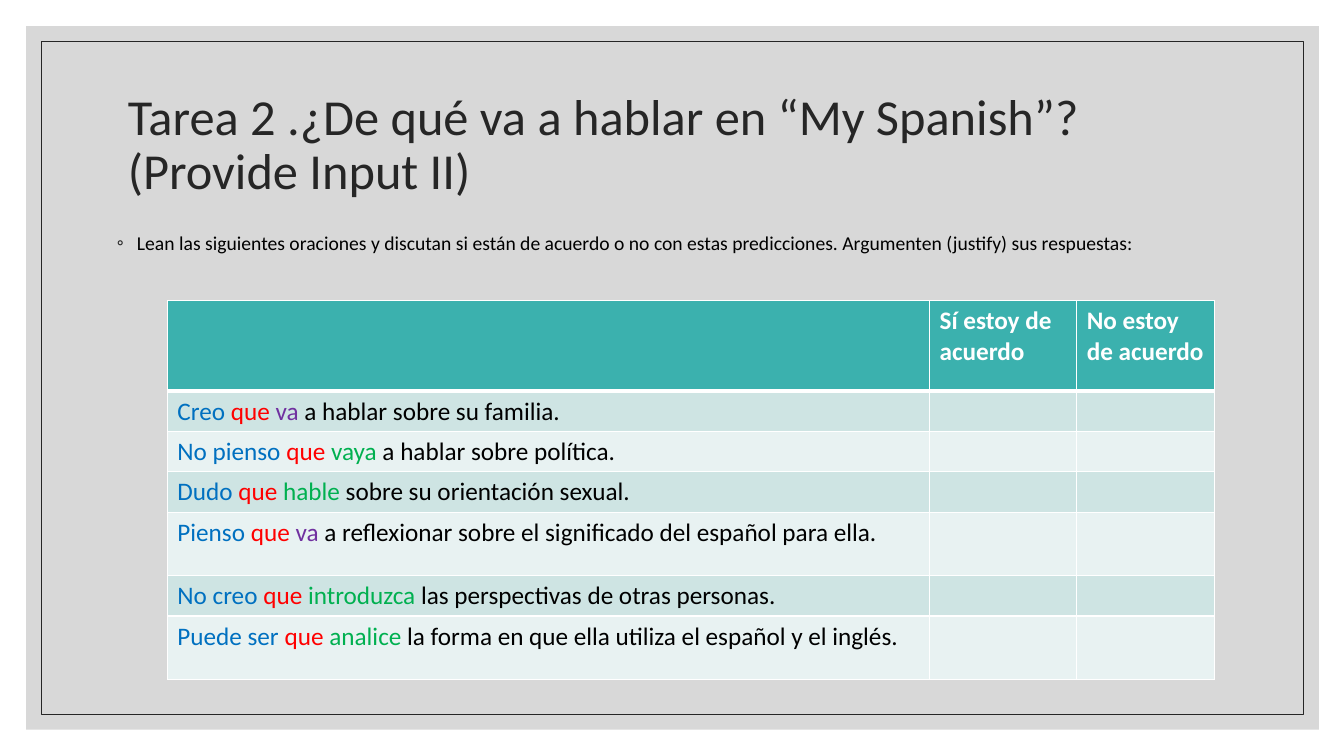
from pptx import Presentation
from pptx.util import Inches, Pt
from pptx.dml.color import RGBColor
from pptx.enum.shapes import MSO_SHAPE
from pptx.enum.text import MSO_ANCHOR
from pptx.oxml.ns import qn
from lxml.etree import SubElement

theme = {
    "font": "Calibri",
    "title": 36, "lead": 14, "cell": 18,
    "ink": "262626", "black": "000000", "white": "FFFFFF",
    "panel": "BFBFBF", "head": "3BB1AE", "bands": ["CEE4E3", "E8F2F2"],
    "verb": "0070C0", "que": "FF0000", "fact": "7030A0", "doubt": "00B050",
}


def color(name):
    return RGBColor.from_string(theme.get(name, name))


def add_run(para, text, size, tint, bold=False):
    run = para.add_run()
    run.text = text
    run.font.name = theme["font"]
    run.font.size = Pt(theme[size])
    run.font.bold = bold
    run.font.color.rgb = color(tint)


deck = Presentation()
deck.slide_width, deck.slide_height = Inches(13.33), Inches(7.5)
slide = deck.slides.add_slide(deck.slide_layouts[6])
shapes = slide.shapes

panel = shapes.add_shape(MSO_SHAPE.RECTANGLE, Inches(0.26), Inches(0.26), Inches(12.82), Inches(6.98))
panel.shadow.inherit = False
panel.fill.solid()
panel.fill.fore_color.rgb = color("panel")
tone = panel.fill._xPr.find(qn("a:solidFill"))[0]
SubElement(tone, qn("a:alpha"), val="60000")
panel.line.fill.background()

frame = shapes.add_shape(MSO_SHAPE.RECTANGLE, Inches(0.41), Inches(0.41), Inches(12.52), Inches(6.68))
frame.shadow.inherit = False
frame.fill.background()
frame.line.color.rgb = color("ink")
frame.line.width = Pt(0.5)

title = shapes.add_textbox(Inches(1.17), Inches(0.7), Inches(11), Inches(1.5)).text_frame
title.word_wrap = True
title.vertical_anchor = MSO_ANCHOR.MIDDLE
para = title.paragraphs[0]
para.line_spacing = 0.9
add_run(para, "Tarea 2 .¿De qué va a hablar en “My Spanish”? (Provide Input II)", "title", "ink")

lead = shapes.add_textbox(Inches(1.06), Inches(2.2), Inches(11.32), Inches(0.5)).text_frame
lead.word_wrap = True
para = lead.paragraphs[0]
para.line_spacing = 1.2
props = para._p.get_or_add_pPr()
props.set("marL", str(Inches(0.2)))
props.set("indent", str(Inches(-0.2)))
tint = SubElement(props, qn("a:buClr"))
SubElement(tint, qn("a:srgbClr"), val=theme["ink"])
SubElement(props, qn("a:buFont"), typeface=theme["font"])
SubElement(props, qn("a:buChar"), char="◦")
add_run(
    para,
    "Lean las siguientes oraciones y discutan si están de acuerdo o no con estas predicciones. "
    "Argumenten (justify) sus respuestas:",
    "lead", "black",
)

heads = ["", "Sí estoy de acuerdo", "No estoy de acuerdo"]
claims = [
    ("Creo ", "va", "fact", " a hablar sobre su familia."),
    ("No pienso ", "vaya", "doubt", " a hablar sobre política."),
    ("Dudo ", "hable", "doubt", " sobre su orientación sexual."),
    ("Pienso ", "va", "fact", " a reflexionar sobre el significado del español para ella."),
    ("No creo ", "introduzca", "doubt", " las perspectivas de otras personas."),
    ("Puede ser ", "analice", "doubt", " la forma en que ella utiliza el español y el inglés."),
]
widths = [7.56, 1.46, 1.37]
heights = [0.9, 0.36, 0.36, 0.36, 0.63, 0.36, 0.63]

table = shapes.add_table(
    len(heights), len(widths), Inches(1.66), Inches(2.98), Inches(sum(widths)), Inches(sum(heights))
).table
for col, width in zip(table.columns, widths):
    col.width = Inches(width)

for i, height in enumerate(heights):
    table.rows[i].height = Inches(height)
    for j in range(len(widths)):
        cell = table.cell(i, j)
        edges = cell._tc.get_or_add_tcPr()
        for side in ["lnL", "lnR", "lnT", "lnB"]:
            thick = (i, side) in [(0, "lnB"), (1, "lnT")]
            edge = SubElement(edges, qn("a:" + side), w=str(Pt(3 if thick else 1)))
            paint = SubElement(edge, qn("a:solidFill"))
            SubElement(paint, qn("a:srgbClr"), val=theme["white"])
        cell.fill.solid()
        cell.fill.fore_color.rgb = color(theme["bands"][(i - 1) % 2] if i else "head")
        para = cell.text_frame.paragraphs[0]
        if i == 0 and heads[j]:
            add_run(para, heads[j], "cell", "white", True)
        elif i and j == 0:
            start, verb, mood, rest = claims[i - 1]
            add_run(para, start, "cell", "verb")
            add_run(para, "que ", "cell", "que")
            add_run(para, verb, "cell", mood)
            add_run(para, rest, "cell", "black")

deck.save("out.pptx")
